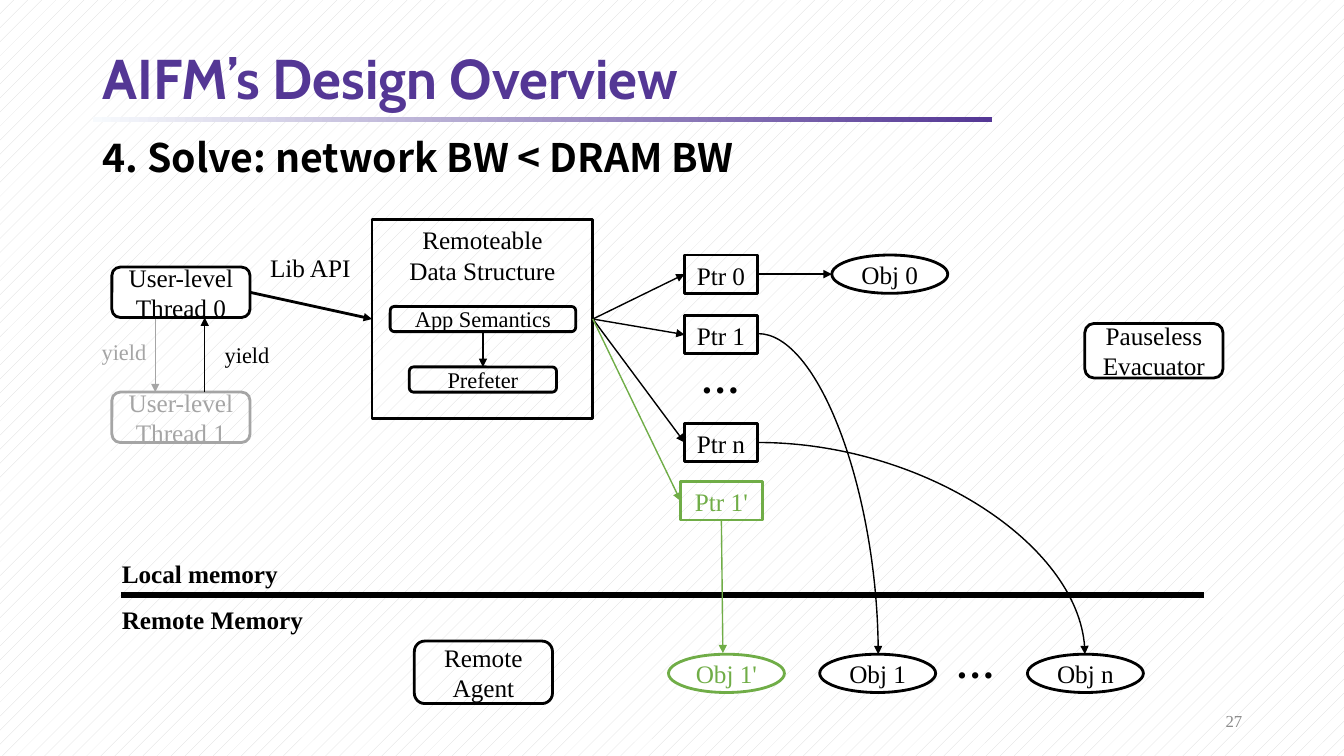
from dataclasses import dataclass

from lxml import etree
from pptx import Presentation
from pptx.dml.color import RGBColor as RGB
from pptx.enum.dml import MSO_PATTERN
from pptx.enum.shapes import MSO_CONNECTOR as Link, MSO_SHAPE as Shape
from pptx.enum.text import MSO_ANCHOR as Anchor, MSO_AUTO_SIZE as AutoSize, PP_ALIGN as Align
from pptx.oxml.ns import qn
from pptx.util import Inches, Pt


@dataclass(frozen=True)
class Theme:
    black: RGB = RGB(0x00, 0x00, 0x00)
    white: RGB = RGB(0xFF, 0xFF, 0xFF)
    purple: RGB = RGB(0x54, 0x37, 0x95)
    pale: RGB = RGB(0xF7, 0xFA, 0xFD)
    gray: RGB = RGB(0xA5, 0xA5, 0xA5)
    number_gray: RGB = RGB(0x8C, 0x8C, 0x8C)
    hatch: RGB = RGB(0xD9, 0xD9, 0xD9)
    green: RGB = RGB(0x70, 0xAD, 0x47)
    title_font: str = "Cabin"
    heading_font: str = "Noto Sans CJK SC"
    diagram_font: str = "Times New Roman"
    title: int = 40
    heading: int = 28
    label: int = 18
    small: int = 16
    number: int = 12


theme = Theme()


def write(shape, text, size, color, font=theme.diagram_font, bold=False,
          align=Align.LEFT, anchor=Anchor.TOP, wrap=True):
    frame = shape.text_frame
    frame.text = text
    frame.word_wrap = wrap
    frame.vertical_anchor = anchor
    if not wrap:
        frame.auto_size = AutoSize.SHAPE_TO_FIT_TEXT
    for paragraph in frame.paragraphs:
        paragraph.alignment = align
        paragraph.font.name = font
        paragraph.font.size = Pt(size)
        paragraph.font.bold = bold
        paragraph.font.color.rgb = color
    return frame


def connect(start, end, color=theme.black, width=1, kind=Link.STRAIGHT, arrow=True):
    ends = [Inches(v) for point in (start, end) for v in (point if len(point) == 2 and isinstance(point[1], float) else (0, 0))]
    line = slide.shapes.add_connector(kind, *ends)
    if not isinstance(start[1], float):
        line.begin_connect(*start)
    if not isinstance(end[1], float):
        line.end_connect(*end)
    line.line.color.rgb = color
    line.line.width = Pt(width)
    properties = line._element.spPr
    if arrow:
        etree.SubElement(line.line._get_or_add_ln(), qn("a:tailEnd"), type="triangle")
    etree.SubElement(properties, qn("a:effectLst"))
    if kind == Link.CURVE:
        properties.find(qn("a:prstGeom")).set("prst", "curvedConnector2")


deck = Presentation()
deck.slide_width, deck.slide_height = Inches(13.33), Inches(7.5)
slide = deck.slides.add_slide(deck.slide_layouts[6])
backdrop = slide.background.fill
backdrop.patterned()
backdrop.pattern = MSO_PATTERN.PERCENT_5
backdrop.fore_color.rgb = theme.hatch
backdrop.back_color.rgb = theme.white

title_rule = slide.shapes.add_shape(Shape.RECTANGLE, Inches(0.92), Inches(1.16), Inches(8.92), Inches(0.05))
title_rule.shadow.inherit = False
title_rule.line.fill.background()
title_rule.fill.gradient()
title_rule.fill.gradient_angle = 0
for stop, position, color in zip(title_rule.fill.gradient_stops, (0, 1), (theme.pale, theme.purple)):
    stop.position = position
    stop.color.rgb = color

page_number = slide.shapes.add_textbox(Inches(9.42), Inches(6.95), Inches(3), Inches(0.4))
write(page_number, "27", theme.number, theme.number_gray, align=Align.RIGHT, anchor=Anchor.MIDDLE)
title = slide.shapes.add_textbox(Inches(0.92), Inches(0.43), Inches(11.5), Inches(0.75))
heading = slide.shapes.add_textbox(Inches(0.92), Inches(1.33), Inches(11.5), Inches(5.43))
for frame in (
    write(title, "AIFM’s Design Overview", theme.title, theme.purple, theme.title_font, True, anchor=Anchor.MIDDLE),
    write(heading, "4. Solve: network BW < DRAM BW", theme.heading, theme.black, theme.heading_font, True),
):
    frame.paragraphs[0].line_spacing = 0.9

connect((1.2, 5.9), (11.94, 5.9), width=4, arrow=False)

labels = [
    ("Local memory", 1.11, 5.49, 1.77, 0.4, theme.label, theme.black, True),
    ("Remote Memory", 1.11, 5.95, 2.02, 0.4, theme.label, theme.black, True),
    ("Lib API", 2.58, 2.45, 1.01, 0.4, theme.label, theme.black, False),
    ("yield", 0.91, 3.31, 0.65, 0.37, theme.small, theme.gray, False),
    ("yield", 2.13, 3.34, 0.65, 0.37, theme.small, theme.black, False),
    ("…", 6.85, 3.47, 0.59, 0.57, theme.heading, theme.black, True),
    ("…", 9.38, 6.29, 0.59, 0.57, theme.heading, theme.black, True),
]
for text, left, top, width, height, size, color, bold in labels:
    label = slide.shapes.add_textbox(Inches(left), Inches(top), Inches(width), Inches(height))
    write(label, text, size, color, bold=bold, wrap=False)

rect, rounded, ellipse = Shape.RECTANGLE, Shape.ROUNDED_RECTANGLE, Shape.OVAL
nodes = [
    ("User-level\nThread 0", rounded, 1.11, 2.65, 1.37, 0.5, theme.black, theme.label, True),
    ("User-level\nThread 1", rounded, 1.11, 3.89, 1.37, 0.5, theme.gray, theme.label, False),
    ("Remoteable\nData Structure", rect, 3.69, 2.18, 2.19, 1.97, theme.black, theme.label, False),
    ("App Semantics", rounded, 3.87, 3.04, 1.84, 0.25, theme.black, theme.small, False),
    ("Prefeter", rounded, 4.06, 3.64, 1.46, 0.25, theme.black, theme.small, False),
    ("Ptr 0", rect, 6.79, 2.53, 0.72, 0.38, theme.black, theme.label, False),
    ("Ptr 1", rect, 6.79, 3.13, 0.72, 0.38, theme.black, theme.label, False),
    ("Ptr n", rect, 6.79, 4.2, 0.72, 0.38, theme.black, theme.label, False),
    ("Ptr 1'", rect, 6.75, 4.78, 0.81, 0.38, theme.green, theme.label, False),
    ("Obj 0", ellipse, 8.25, 2.53, 1.15, 0.38, theme.black, theme.label, True),
    ("Obj 1'", ellipse, 6.63, 6.49, 1.15, 0.38, theme.green, theme.label, True),
    ("Obj 1", ellipse, 8.13, 6.49, 1.15, 0.38, theme.black, theme.label, True),
    ("Obj n", ellipse, 10.19, 6.49, 1.15, 0.38, theme.black, theme.label, True),
    ("Pauseless\nEvacuator", rounded, 10.76, 3.21, 1.37, 0.54, theme.black, theme.label, True),
    ("Remote\nAgent", rounded, 4.11, 6.36, 1.37, 0.62, theme.black, theme.label, False),
]
placed = {}
for text, outline, left, top, width, height, color, size, filled in nodes:
    node = slide.shapes.add_shape(outline, Inches(left), Inches(top), Inches(width), Inches(height))
    node.shadow.inherit = False
    node.line.color.rgb = color
    node.line.width = Pt(2)
    if filled:
        node.fill.solid()
        node.fill.fore_color.rgb = theme.white
    else:
        node.fill.background()
    write(node, text, size, color, align=Align.CENTER, anchor=Anchor.TOP if outline == rect else Anchor.MIDDLE)
    placed[text.replace("\n", " ")] = node

TOP, LEFT, BOTTOM, RIGHT = range(4)
structure = placed["Remoteable Data Structure"]
connect((placed["User-level Thread 0"], RIGHT), (structure, LEFT), width=2)
connect((placed["App Semantics"], BOTTOM), (placed["Prefeter"], TOP))
connect((1.54, 3.16), (1.54, 3.89), theme.gray, 0.5)
connect((2.03, 3.89), (2.03, 3.15))
for pointer, color in (("Ptr 0", theme.black), ("Ptr 1", theme.black), ("Ptr n", theme.black), ("Ptr 1'", theme.green)):
    connect((structure, RIGHT), (placed[pointer], LEFT), color)
connect((placed["Ptr 0"], RIGHT), (8.25, 2.72))
connect((placed["Ptr 1'"], BOTTOM), (7.17, 6.48), theme.green)
connect((7.52, 3.31), (8.71, 6.49), kind=Link.CURVE)
connect((7.52, 4.39), (10.76, 6.49), kind=Link.CURVE)

deck.save("out.pptx")
